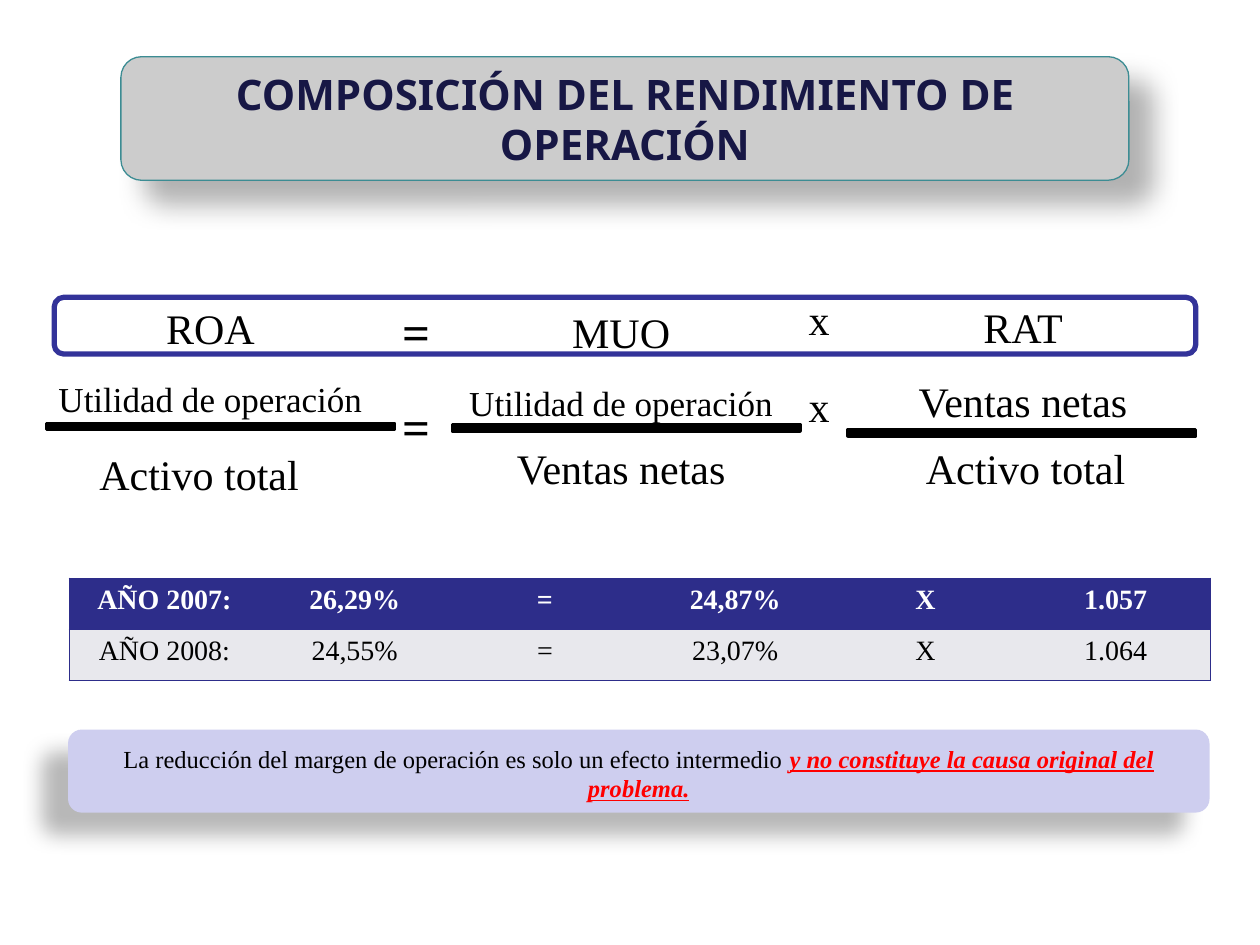
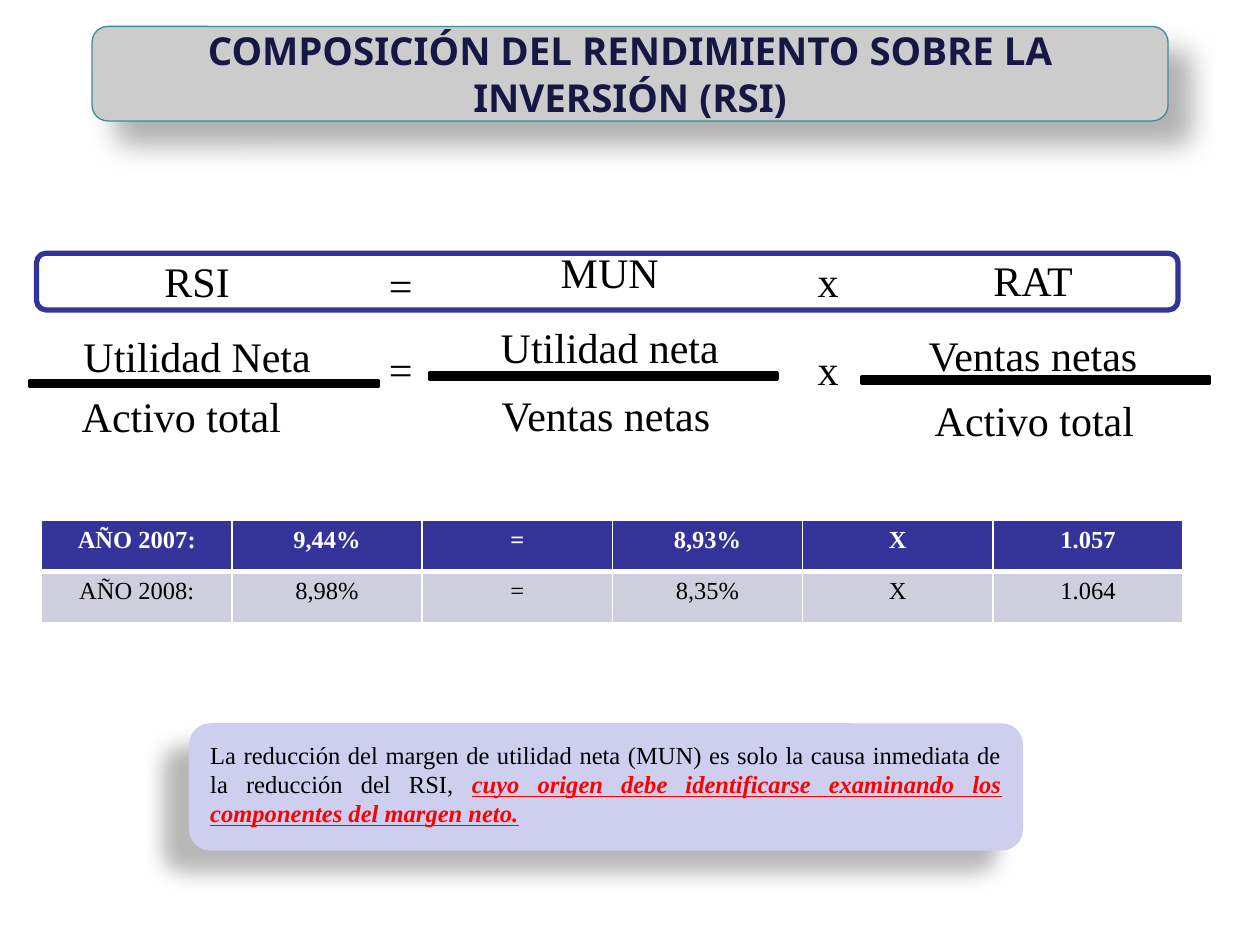
"""Two slides that break a return ratio into margin times turnover."""
from dataclasses import dataclass

from pptx import Presentation
from pptx.dml.color import RGBColor
from pptx.enum.shapes import MSO_SHAPE
from pptx.enum.text import MSO_ANCHOR, MSO_AUTO_SIZE, PP_ALIGN
from pptx.oxml import parse_xml
from pptx.oxml.ns import nsdecls
from pptx.util import Pt


@dataclass(frozen=True)
class Theme:
    """Shared colours, fonts and type sizes."""
    head: str = "Noto Sans"
    body: str = "Times New Roman"
    navy: str = "171745"
    grey: str = "CCCCCC"
    teal: str = "3C8C93"
    blue: str = "333399"
    lilac: str = "CECEEF"
    black: str = "000000"
    white: str = "FFFFFF"
    red: str = "FF0000"
    term: int = 24
    note: int = 14


T = Theme()
LEFT, MID, JUST = PP_ALIGN.LEFT, PP_ALIGN.CENTER, PP_ALIGN.JUSTIFY
WIDE, TERM, DEN, SIGN = 652.3, 198.7, 165.6, 31.7

SLIDES = [
    {
        "title": "COMPOSICIÓN DEL RENDIMIENTO DE OPERACIÓN",
        "band": (69.1, 32.4, 576, 70.6), "size": 24,
        "frame": (31, 169.9),
        "terms": [
            ("ROA", "Utilidad de operación", "Activo total", 20,
             (20.9, 169.2, TERM, 74.9), (26.6, 241.9), (31, 252.7)),
            ("MUO", "Utilidad de operación", "Ventas netas", 20,
             (255.6, 171.4, TERM, 74.9), (258.5, 242.6), (272.2, 249.1)),
            ("RAT", "Ventas netas", "Activo total", 24,
             (485.3, 168.5, TERM, 65.5), (484.6, 245.5), (503.3, 249.1)),
        ],
        "signs": [("=", 223.2, (168.5, 223.2), 54.7, 28, True, LEFT),
                  ("x", 455, (164.2, 213.8), 55.4, 24, False, LEFT)],
        "rows": [("AÑO 2007:", "26,29%", "=", "24,87%", "X", "1.057"),
                 ("AÑO 2008:", "24,55%", "=", "23,07%", "X", "1.064")],
        "table": (39.6, 330.5), "type": 16,
        "fills": ("2D2D8A", "E8E8ED"),
        "edge": "2D2D8A", "inner": 0, "rule": 1,
        "note": ("La reducción del margen de operación es solo un efecto "
                 "intermedio ",
                 "y no constituye la causa original del problema."),
        "box": (38.9, 416.9, WIDE, 47.5), "align": MID,
    },
    {
        "title": "COMPOSICIÓN DEL RENDIMIENTO SOBRE LA INVERSIÓN (RSI)",
        "band": (52.6, 15.1, 614.9, 54), "size": 22,
        "frame": (20.9, 144.7),
        "terms": [
            ("RSI", "Utilidad Neta", "Activo total", 24,
             (7.2, 142.6, 211, 65.5), (17.3, 217.4), (20.9, 219.6)),
            ("MUN", "Utilidad neta", "Ventas netas", 24,
             (249.1, 137.5, TERM, 65.5), (245.5, 213.1), (263.5, 218.9)),
            ("RAT", "Ventas netas", "Activo total", 24,
             (491, 141.8, TERM, 65.5), (492.5, 215.3), (508.3, 221.8)),
        ],
        "signs": [("=", 213.1, (144.7, 193), 36.7, 24, False, MID),
                  ("x", 460.1, (142.6, 193), 56.2, 24, False, LEFT)],
        "rows": [("AÑO 2007:", "9,44%", "=", "8,93%", "X", "1.057"),
                 ("AÑO 2008:", "8,98%", "=", "8,35%", "X", "1.064")],
        "table": (23.8, 297.4), "type": 14,
        "fills": (T.blue, "CECEDE"),
        "edge": T.white, "inner": 1, "rule": 3,
        "note": ("La reducción del margen de utilidad neta (MUN) es solo la "
                 "causa inmediata de la reducción del RSI, ",
                 "cuyo origen debe identificarse examinando los componentes "
                 "del margen neto."),
        "box": (108, 413.3, 476.6, 72.7), "align": JUST,
    },
]


def pts(box):
    """Turn a tuple of numbers into lengths."""
    return [Pt(n) for n in box]


def paint(shape, fill=None, line=None, width=1):
    """Set fill and line and drop the shadow."""
    if fill:
        shape.fill.solid()
        shape.fill.fore_color.rgb = RGBColor.from_string(fill)
    else:
        shape.fill.background()
    if line:
        shape.line.color.rgb = RGBColor.from_string(line)
        shape.line.width = Pt(width)
    else:
        shape.line.fill.background()
    shape.shadow.inherit = False


def cast(shape, alpha, blur, dist, angle):
    """Give a painted shape a soft outer shadow."""
    shape._element.spPr.find("{*}effectLst").append(parse_xml(
        f'<a:outerShdw {nsdecls("a")} blurRad="{Pt(blur)}" dist="{Pt(dist)}" '
        f'dir="{angle * 60000}" algn="ctr" rotWithShape="0">'
        f'<a:srgbClr val="{T.black}"><a:alpha val="{alpha * 1000}"/>'
        f'</a:srgbClr></a:outerShdw>'))


def style(para, size, color=T.black, bold=False, align=MID, face=T.body):
    """Format every run of a paragraph."""
    para.alignment = align
    for run in para.runs:
        run.font.name = face
        run.font.size = Pt(size)
        run.font.bold = bold
        run.font.color.rgb = RGBColor.from_string(color)


def label(slide, box, lines, bold=False, align=MID):
    """Add a text box with one paragraph per (text, size) line."""
    frame = slide.shapes.add_textbox(*pts(box)).text_frame
    frame.word_wrap = True
    frame.text = "\n".join(text for text, _ in lines)
    for para, (_, size) in zip(frame.paragraphs, lines):
        style(para, size, bold=bold, align=align)
    for para in frame.paragraphs[1:]:
        para.space_before = Pt(14)


def add_title(slide, page):
    """Lay the title over a rounded grey band."""
    place = pts(page["band"])
    band = slide.shapes.add_shape(MSO_SHAPE.ROUNDED_RECTANGLE, *place)
    paint(band, T.grey, T.teal, 0.75)
    cast(band, 30, 15, 18, 45)
    title = slide.shapes.title
    title._element.addprevious(band._element)
    title.left, title.top, title.width, title.height = place
    frame = title.text_frame
    frame.text = page["title"]
    frame.word_wrap = True
    frame.auto_size = MSO_AUTO_SIZE.NONE
    frame.vertical_anchor = MSO_ANCHOR.MIDDLE
    style(frame.paragraphs[0], page["size"], T.navy, True, face=T.head)


def add_ratio(slide, page):
    """Draw the framed formula with its fractions and signs."""
    for name, num, den, size, head, bar, foot in page["terms"]:
        label(slide, head, [(name, T.term), (num, size)])
        rule = slide.shapes.add_shape(
            MSO_SHAPE.RECTANGLE, *pts((*bar, TERM, 3.6)))
        paint(rule, T.black, T.black, 2)
        label(slide, (*foot, DEN, 28.8), [(den, T.term)])
    for sign, left, tops, high, size, bold, align in page["signs"]:
        for top in tops:
            label(slide, (left, top, SIGN, high), [(sign, size)],
                  bold=bold, align=align)
    frame = slide.shapes.add_shape(
        MSO_SHAPE.ROUNDED_RECTANGLE, *pts((*page["frame"], WIDE, 32.4)))
    paint(frame, line=T.blue, width=3)


def edge(cell, side, color, width):
    """Set one border of a cell; no width means no line."""
    ink = (f'<a:solidFill><a:srgbClr val="{color}"/></a:solidFill>'
           if width else '<a:noFill/>')
    cell._tc.get_or_add_tcPr().append(parse_xml(
        f'<a:ln{side} {nsdecls("a")} w="{Pt(width)}">{ink}</a:ln{side}>'))


def add_table(slide, page):
    """Add the table of yearly values."""
    rows = page["rows"]
    last = len(rows[0]) - 1
    table = slide.shapes.add_table(
        len(rows), last + 1, *pts((*page["table"], WIDE, 58.4))).table
    table.horz_banding = False
    for r, row in enumerate(rows):
        table.rows[r].height = Pt(29.2)
        for c, text in enumerate(row):
            cell = table.cell(r, c)
            widths = {"L": page["inner"] if c else 1,
                      "R": page["inner"] if c < last else 1,
                      "T": page["rule"] if r else 1,
                      "B": 1 if r else page["rule"]}
            for side, width in widths.items():
                edge(cell, side, page["edge"], width)
            cell.fill.solid()
            cell.fill.fore_color.rgb = RGBColor.from_string(page["fills"][r])
            cell.text_frame.text = text
            style(cell.text_frame.paragraphs[0], page["type"],
                  T.black if r else T.white, r == 0)


def add_note(slide, page):
    """Add the lilac remark with its red ending."""
    note = slide.shapes.add_shape(
        MSO_SHAPE.ROUNDED_RECTANGLE, *pts(page["box"]))
    paint(note, T.lilac)
    cast(note, 28, 11.8, 19.7, 141)
    frame = note.text_frame
    frame.word_wrap = True
    frame.vertical_anchor = MSO_ANCHOR.TOP
    frame.margin_left = frame.margin_right = Pt(8.6)
    frame.margin_top, frame.margin_bottom = Pt(5.8), Pt(7.2)
    para = frame.paragraphs[0]
    for text in page["note"]:
        para.add_run().text = text
    style(para, T.note, align=page["align"])
    font = para.runs[-1].font
    font.bold = font.italic = font.underline = True
    font.color.rgb = RGBColor.from_string(T.red)


def main():
    """Build and save the deck."""
    deck = Presentation()
    deck.slide_width, deck.slide_height = Pt(720), Pt(540)
    for page in SLIDES:
        slide = deck.slides.add_slide(deck.slide_layouts[5])
        for add in (add_title, add_ratio, add_table, add_note):
            add(slide, page)
    deck.save("out.pptx")


if __name__ == "__main__":
    main()
